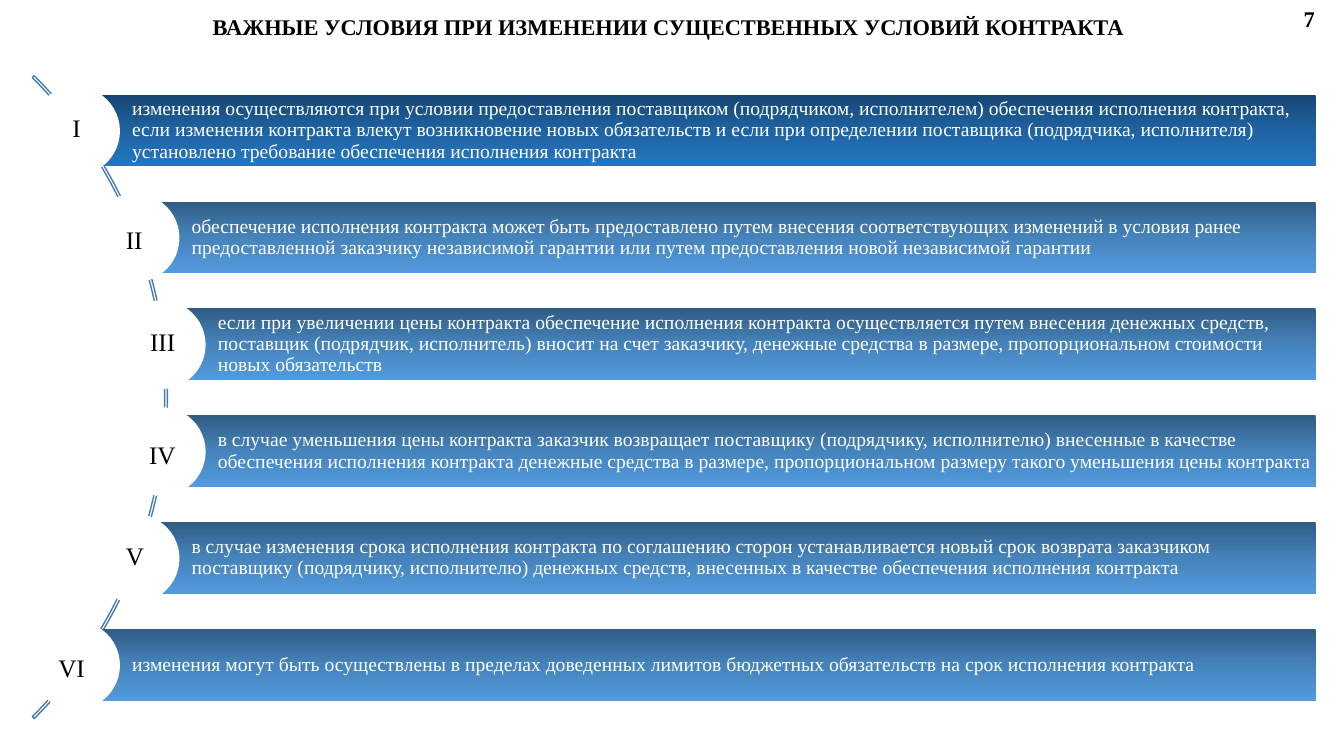
"""Build the slide on conditions for changing the essential terms of a contract."""
from copy import deepcopy
from dataclasses import dataclass

from pptx import Presentation, util as u
from pptx.dml.color import RGBColor
from pptx.enum import shapes, text


@dataclass(frozen=True)
class Theme:
    font: str = "Times New Roman"
    dark: str = "000000"
    light: str = "FFFFFF"
    arc: str = "497CAB"
    lead_bar: tuple = ("164672", "1F63A2", "2476C0")
    bar: tuple = ("305C84", "4583BB", "529BDE")
    heading: int = 16
    body: int = 14
    numeral: int = 18


THEME = Theme()
EMU_PER_PX = 9144
BAR_TOP, BAR_PITCH, BAR_HEIGHT, BAR_RIGHT = 94, 106, 71, 1305
CIRCLE = 88

CONDITIONS = [
    ("I", (62, 107, 28), 75,
     "изменения осуществляются при условии предоставления поставщиком (подрядчиком, исполнителем) "
     "обеспечения исполнения контракта, если изменения контракта влекут возникновение новых "
     "обязательств и если при определении поставщика (подрядчика, исполнителя) установлено "
     "требование обеспечения исполнения контракта"),
    ("II", (115, 218, 37), 134,
     "обеспечение исполнения контракта может быть предоставлено путем внесения соответствующих "
     "изменений в условия ранее предоставленной заказчику независимой гарантии или путем "
     "предоставления новой независимой гарантии"),
    ("III", (139, 319, 45), 160,
     "если при увеличении цены контракта обеспечение исполнения контракта осуществляется путем "
     "внесения денежных средств, поставщик (подрядчик, исполнитель) вносит на счет заказчику, "
     "денежные средства в размере, пропорциональном стоимости новых обязательств"),
    ("IV", (138, 431, 47), 160,
     "в случае уменьшения цены контракта заказчик возвращает поставщику (подрядчику, исполнителю) "
     "внесенные в качестве обеспечения исполнения контракта денежные средства в размере, "
     "пропорциональном размеру такого уменьшения цены контракта"),
    ("V", (115, 531, 38), 134,
     "в случае изменения срока исполнения контракта по соглашению сторон устанавливается новый "
     "срок возврата заказчиком поставщику (подрядчику, исполнителю) денежных средств, внесенных "
     "в качестве обеспечения исполнения контракта"),
    ("VI", (48, 642, 47), 75,
     "изменения могут быть осуществлены в пределах доведенных лимитов бюджетных обязательств "
     "на срок исполнения контракта"),
]


def px(length):
    """Convert whole px to EMU."""
    return u.Emu(length * EMU_PER_PX)


def write(frame, words, *, size, color=THEME.dark, bold=False, align=text.PP_ALIGN.LEFT,
          anchor=text.MSO_ANCHOR.TOP, insets=(10, 5, 10, 5), spacing=1.0, wrap=True):
    """Put formatted words into a text frame."""
    frame.auto_size = text.MSO_AUTO_SIZE.NONE
    frame.word_wrap = wrap
    frame.vertical_anchor = anchor
    (frame.margin_left, frame.margin_top,
     frame.margin_right, frame.margin_bottom) = map(px, insets)
    paragraph = frame.paragraphs[0]
    paragraph.alignment = align
    paragraph.line_spacing = spacing
    run = paragraph.add_run()
    run.text = words
    run.font.name = THEME.font
    run.font.size = u.Pt(size)
    run.font.bold = bold
    run.font.color.rgb = RGBColor.from_string(color)


class SlideBuilder:
    """Draw themed elements on one slide."""

    def __init__(self, presentation, theme):
        """Add a title-only slide."""
        self.theme = theme
        self.slide = presentation.slides.add_slide(presentation.slide_layouts[5])

    def title(self, words, left, top, width, height):
        """Place and fill the title placeholder."""
        shape = self.slide.shapes.title
        shape.left, shape.top, shape.width, shape.height = map(px, (left, top, width, height))
        write(shape.text_frame, words, size=self.theme.heading, bold=True,
              align=text.PP_ALIGN.CENTER, anchor=text.MSO_ANCHOR.MIDDLE)

    def shape(self, kind, *box):
        """Add a preset shape without a shadow."""
        shape = self.slide.shapes.add_shape(kind, *map(px, box))
        shape.shadow.inherit = False
        return shape

    def arc(self, left, top, diameter):
        """Add the thin outlined arc."""
        shape = self.shape(shapes.MSO_SHAPE.BLOCK_ARC, left, top, diameter, diameter)
        for index, value in enumerate((189, 27, 0.003)):
            shape.adjustments[index] = value
        shape.fill.background()
        shape.line.color.rgb = RGBColor.from_string(self.theme.arc)
        shape.line.width = u.Pt(1)

    def bar(self, words, left, top, colors):
        """Add a gradient bar with its condition."""
        shape = self.shape(shapes.MSO_SHAPE.RECTANGLE, left, top, BAR_RIGHT - left, BAR_HEIGHT)
        shape.line.fill.background()
        shape.fill.gradient()
        shape.fill.gradient_angle = 270
        stop_list = shape.element.spPr.find(".//{*}gsLst")
        stop_list.append(deepcopy(stop_list[0]))
        for stop, position, color in zip(shape.fill.gradient_stops, (0, 0.5, 1), colors):
            stop.position = position
            stop.color.rgb = RGBColor.from_string(color)
        write(shape.text_frame, words, size=self.theme.body, color=self.theme.light,
              anchor=text.MSO_ANCHOR.MIDDLE, insets=(56, 4, 3, 4), spacing=0.9)

    def circle(self, left, top):
        """Add a white circle at the start of a bar."""
        shape = self.shape(shapes.MSO_SHAPE.OVAL, left, top, CIRCLE, CIRCLE)
        shape.fill.solid()
        shape.fill.fore_color.rgb = RGBColor.from_string(self.theme.light)
        shape.line.fill.background()

    def label(self, words, left, top, width, height=40, **style):
        """Add a short one-line label."""
        box = self.slide.shapes.add_textbox(*map(px, (left, top, width, height)))
        write(box.text_frame, words, wrap=False, **style)


def main():
    """Build and save the presentation."""
    presentation = Presentation()
    presentation.slide_width, presentation.slide_height = px(1333), px(750)
    builder = SlideBuilder(presentation, THEME)
    builder.title("ВАЖНЫЕ УСЛОВИЯ ПРИ ИЗМЕНЕНИИ СУЩЕСТВЕННЫХ УСЛОВИЙ КОНТРАКТА", -7, 1, 1340, 51)
    builder.arc(-736, -57, 902)
    for index, (numeral, place, left, words) in enumerate(CONDITIONS):
        top = BAR_TOP + index * BAR_PITCH
        builder.bar(words, left, top, THEME.bar if index else THEME.lead_bar)
        builder.circle(left - CIRCLE // 2, top - (CIRCLE - BAR_HEIGHT) // 2)
        builder.label(numeral, *place, size=THEME.numeral)
    builder.label("7", 1283, 0, 31, 37, size=THEME.heading, bold=True)
    presentation.save("out.pptx")


if __name__ == "__main__":
    main()
